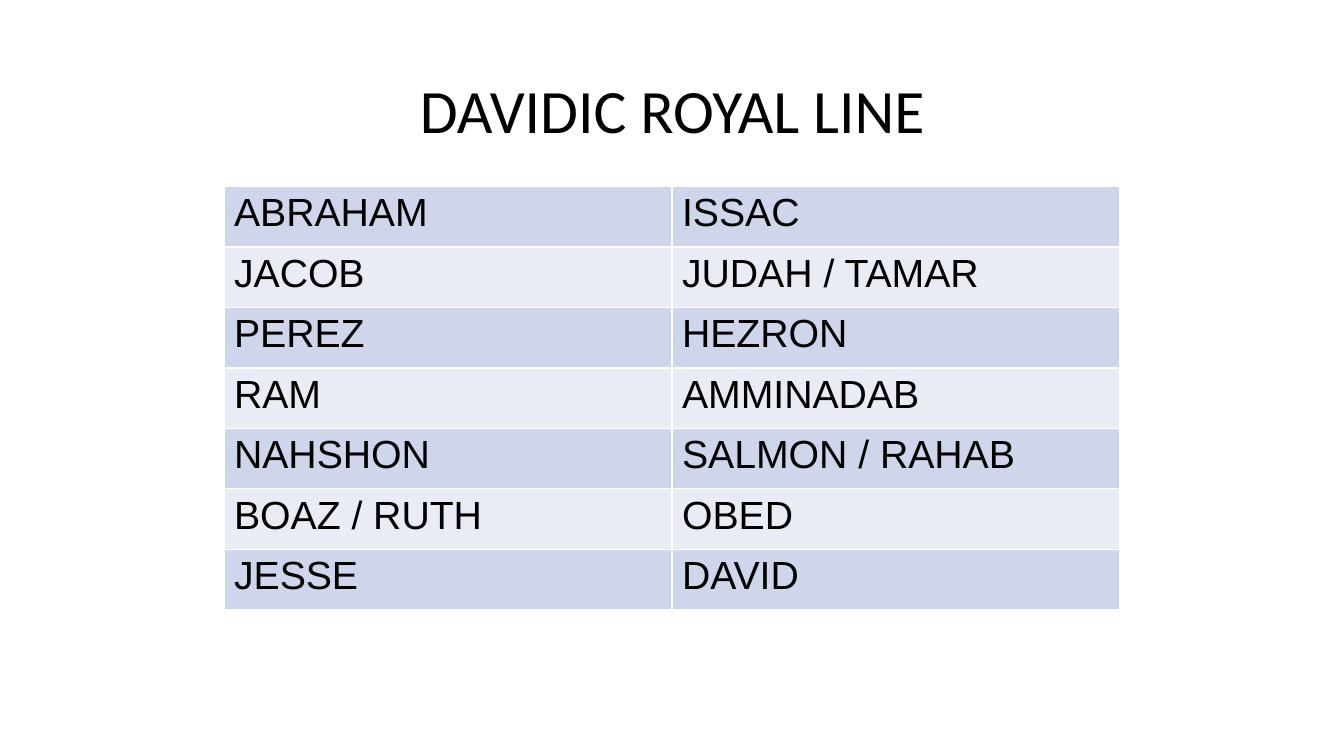
from lxml import etree
from pptx import Presentation
from pptx import util as u
from pptx.dml.color import RGBColor
from pptx.enum import text
from pptx.oxml import ns

WIDTH, HEIGHT = 13.33, 7.5
BLACK, WHITE = "000000", "FFFFFF"
BANDS = ("CFD5EA", "E9EBF5")
ROW_HEIGHT = 0.6
LINEAGE = [
    ("ABRAHAM", "ISSAC"),
    ("JACOB", "JUDAH / TAMAR"),
    ("PEREZ", "HEZRON"),
    ("RAM", "AMMINADAB"),
    ("NAHSHON", "SALMON / RAHAB"),
    ("BOAZ / RUTH", "OBED"),
    ("JESSE", "DAVID"),
]


def color(hex_code):
    return RGBColor.from_string(hex_code)


def add_span(para, words, font, size):
    span = para.add_run()
    span.text = words
    span.font.name = font
    span.font.size = u.Pt(size)
    span.font.color.rgb = color(BLACK)


def set_title(page, words):
    title = page.shapes.title
    title.left, title.top = u.Inches(0.92), u.Inches(0.4)
    title.width, title.height = u.Inches(11.5), u.Inches(1.45)
    box = title.text_frame
    box.word_wrap = True
    box.auto_size = text.MSO_AUTO_SIZE.NONE
    box.vertical_anchor = text.MSO_ANCHOR.MIDDLE
    box.margin_left = box.margin_right = u.Inches(0.1)
    box.margin_top = box.margin_bottom = u.Inches(0.05)
    para = box.paragraphs[0]
    para.alignment = text.PP_ALIGN.CENTER
    para.line_spacing = 0.9
    add_span(para, words, "Calibri", 44)


def add_borders(cell, hex_code, points):
    properties = cell._tc.get_or_add_tcPr()
    for side in ("a:lnL", "a:lnR", "a:lnT", "a:lnB"):
        line = etree.SubElement(properties, ns.qn(side), w=str(u.Pt(points)))
        fill = etree.SubElement(line, ns.qn("a:solidFill"))
        etree.SubElement(fill, ns.qn("a:srgbClr"), val=hex_code)


def fill_cell(cell, words, band):
    add_borders(cell, WHITE, 1)
    cell.fill.solid()
    cell.fill.fore_color.rgb = color(band)
    add_span(cell.text_frame.paragraphs[0], words, "Arial", 28)


def add_lineage_table(page, rows):
    # Two thirds of the slide's width, centred
    frame = page.shapes.add_table(
        len(rows), len(rows[0]),
        u.Inches(WIDTH / 6), u.Inches(1.85),
        u.Inches(WIDTH * 2 / 3), u.Inches(ROW_HEIGHT * len(rows)))
    table = frame.table
    table.first_row = False
    for row_index, names in enumerate(rows):
        for column_index, name in enumerate(names):
            band = BANDS[row_index % len(BANDS)]
            fill_cell(table.cell(row_index, column_index), name, band)


def main():
    deck = Presentation()
    deck.slide_width, deck.slide_height = u.Inches(WIDTH), u.Inches(HEIGHT)
    page = deck.slides.add_slide(deck.slide_layouts[5])
    page.background.fill.solid()
    page.background.fill.fore_color.rgb = color(WHITE)

    # Heading
    set_title(page, "DAVIDIC ROYAL LINE")

    # Generations, read across each row
    add_lineage_table(page, LINEAGE)

    deck.save("out.pptx")


if __name__ == "__main__":
    main()
